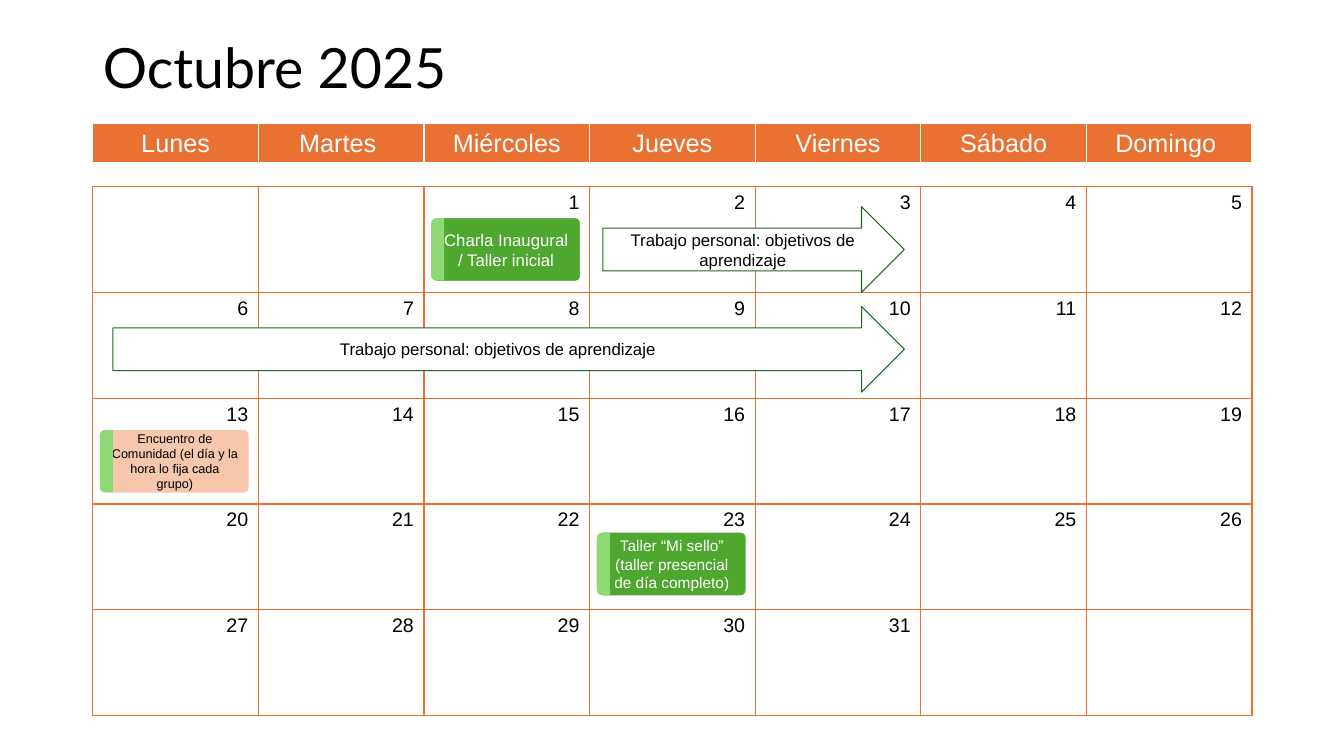
from collections import namedtuple
from dataclasses import dataclass

from lxml.etree import SubElement
from pptx import Presentation
from pptx.dml.color import RGBColor
from pptx.enum.shapes import MSO_SHAPE as Preset
from pptx.enum.text import MSO_ANCHOR as Anchor, MSO_AUTO_SIZE as AutoSize, PP_ALIGN as Align
from pptx.oxml.ns import qn
from pptx.util import Inches, Pt

Box = namedtuple("Box", "left top width height")


@dataclass(frozen=True)
class Theme:
    """Colours, fonts and type sizes of the calendar."""
    orange: str = "E97132"
    peach: str = "F6C6AD"
    green: str = "4EA72E"
    light_green: str = "8ED973"
    dark_green: str = "196B24"
    white: str = "FFFFFF"
    black: str = "000000"
    title_font: str = "Lato"
    body_font: str = "Arial"
    title_size: float = 39.6
    weekday_size: float = 18
    day_size: float = 14
    event_size: float = 12
    workshop_size: float = 11
    meeting_size: float = 9


THEME = Theme()
WEEKDAYS = ["Lunes", "Martes ", "Miércoles", "Jueves", "Viernes", "Sábado", "Domingo "]
WEEKS = 5
LAST_DAY = 31
BLANK_DAYS = 2
TITLE = Box(0.92, 0.4, 11.5, 0.6)
HEADER = Box(0.92, 1.22, 11.5, 0.41)
MONTH = Box(0.92, 1.85, 11.5, 5.25)
ARROW_END = 8.97
PERSONAL_WORK = "Trabajo personal: objetivos de aprendizaje"


def write(frame, text, size, color, align=Align.CENTER, name=THEME.body_font):
    """Put one formatted paragraph into a text frame."""
    para = frame.paragraphs[0]
    para.alignment = align
    span = para.add_run()
    span.text = text
    for key, value in {"size": Pt(size), "name": name}.items():
        setattr(span.font, key, value)
    span.font.color.rgb = RGBColor.from_string(color)


def set_borders(cell, color, widths):
    """Draw the left, right, top and bottom borders of a cell."""
    properties = cell._tc.get_or_add_tcPr()
    for side, width in zip("LRTB", widths):
        line = SubElement(properties, qn(f"a:ln{side}"), w=str(Pt(width)))
        fill = SubElement(line, qn("a:solidFill"))
        SubElement(fill, qn("a:srgbClr"), val=color)


def add_grid(page, box, rows):
    """Add an unbanded table of equal cells, one column per weekday."""
    columns = len(WEEKDAYS)
    table = page.shapes.add_table(rows, columns, *map(Inches, box)).table
    for flag in ("first_row", "horz_banding"):
        setattr(table, flag, False)
    for column in table.columns:
        column.width = Inches(box.width / columns)
    for row in table.rows:
        row.height = Inches(box.height / rows)
    return table


def add_title(page, box, text):
    """Place the month name in the title placeholder."""
    title = page.shapes.title
    for key, value in zip(Box._fields, box):
        setattr(title, key, Inches(value))
    frame = title.text_frame
    for key, value in {"auto_size": AutoSize.NONE, "vertical_anchor": Anchor.MIDDLE}.items():
        setattr(frame, key, value)
    write(frame, text, THEME.title_size, THEME.black, Align.LEFT, THEME.title_font)
    frame.paragraphs[0].line_spacing = 0.9


def add_weekdays(page, box):
    """Add the band of weekday names."""
    table = add_grid(page, box, 1)
    for cell, weekday in zip(table.iter_cells(), WEEKDAYS):
        set_borders(cell, THEME.white, (1, 1, 1, 3))
        cell.fill.solid()
        cell.fill.fore_color.rgb = RGBColor.from_string(THEME.orange)
        cell.vertical_anchor = Anchor.MIDDLE
        write(cell.text_frame, weekday, THEME.weekday_size, THEME.white)


def add_month(page, box):
    """Add the grid of numbered days."""
    table = add_grid(page, box, WEEKS)
    for day, cell in enumerate(table.iter_cells(), start=1 - BLANK_DAYS):
        set_borders(cell, THEME.orange, (1, 1, 1, 1))
        cell.fill.background()
        if 1 <= day <= LAST_DAY:
            write(cell.text_frame, str(day), THEME.day_size, THEME.black, Align.RIGHT)


def day_corner(day):
    """Return the left and top of a day in the month grid."""
    week, weekday = divmod(day + BLANK_DAYS - 1, len(WEEKDAYS))
    return (MONTH.left + weekday * MONTH.width / len(WEEKDAYS),
            MONTH.top + week * MONTH.height / WEEKS)


def add_block(shapes, preset, box, fill, line=None, width=0):
    """Add a flat preset shape with an optional outline."""
    shape = shapes.add_shape(preset, *map(Inches, box))
    shape.shadow.inherit = False
    shape.fill.solid()
    shape.fill.fore_color.rgb = RGBColor.from_string(fill)
    if line:
        shape.line.color.rgb = RGBColor.from_string(line)
        shape.line.width = Pt(width)
    else:
        shape.line.fill.background()
    shape.text_frame.word_wrap = True
    shape.text_frame.vertical_anchor = Anchor.MIDDLE
    return shape


def add_event(page, day, drop, text, size, fill, color):
    """Add an event card with a striped left edge inside a day."""
    left, top = day_corner(day)
    box = Box(left + 0.07, top + drop, 1.49, 0.65)
    shapes = page.shapes.add_group_shape().shapes
    card = add_block(shapes, Preset.ROUNDED_RECTANGLE, box, fill, THEME.white, 2)
    card.adjustments[0] = 0.09
    write(card.text_frame, text, size, color)
    length, depth = 0.62, 0.13
    edge = Box(box.left + (depth - length) / 2, box.top + (box.height - depth) / 2, length, depth)
    stripe = add_block(shapes, Preset.ROUND_2_SAME_RECTANGLE, edge, THEME.light_green)
    stripe.rotation = 270
    stripe.adjustments[0] = 0.4


def add_work_arrow(page, day, indent, drop):
    """Add a personal work arrow from a day to the end of its Friday."""
    left, top = day_corner(day)
    start = left + indent
    box = Box(start, top + drop, ARROW_END - start, 0.85)
    arrow = add_block(page.shapes, Preset.RIGHT_ARROW, box, THEME.white, THEME.dark_green, 0.75)
    write(arrow.text_frame, PERSONAL_WORK, THEME.event_size, THEME.black)


def build_calendar(page):
    """Compose the month page from back to front."""
    add_title(page, TITLE, "Octubre 2025")
    add_month(page, MONTH)
    add_weekdays(page, HEADER)
    add_event(page, 1, 0.3, "Charla Inaugural / Taller inicial",
              THEME.event_size, THEME.green, THEME.white)
    add_event(page, 23, 0.27, "Taller “Mi sello” (taller presencial de día completo)",
              THEME.workshop_size, THEME.green, THEME.white)
    add_work_arrow(page, 2, 0.13, 0.2)
    add_event(page, 13, 0.3, "Encuentro de Comunidad (el día y la hora lo fija cada grupo)",
              THEME.meeting_size, THEME.peach, THEME.black)
    add_work_arrow(page, 6, 0.2, 0.14)


def main():
    """Build and save the deck."""
    deck = Presentation()
    deck.slide_width, deck.slide_height = Inches(13.33), Inches(7.5)
    build_calendar(deck.slides.add_slide(deck.slide_layouts[5]))
    deck.save("out.pptx")


if __name__ == "__main__":
    main()
